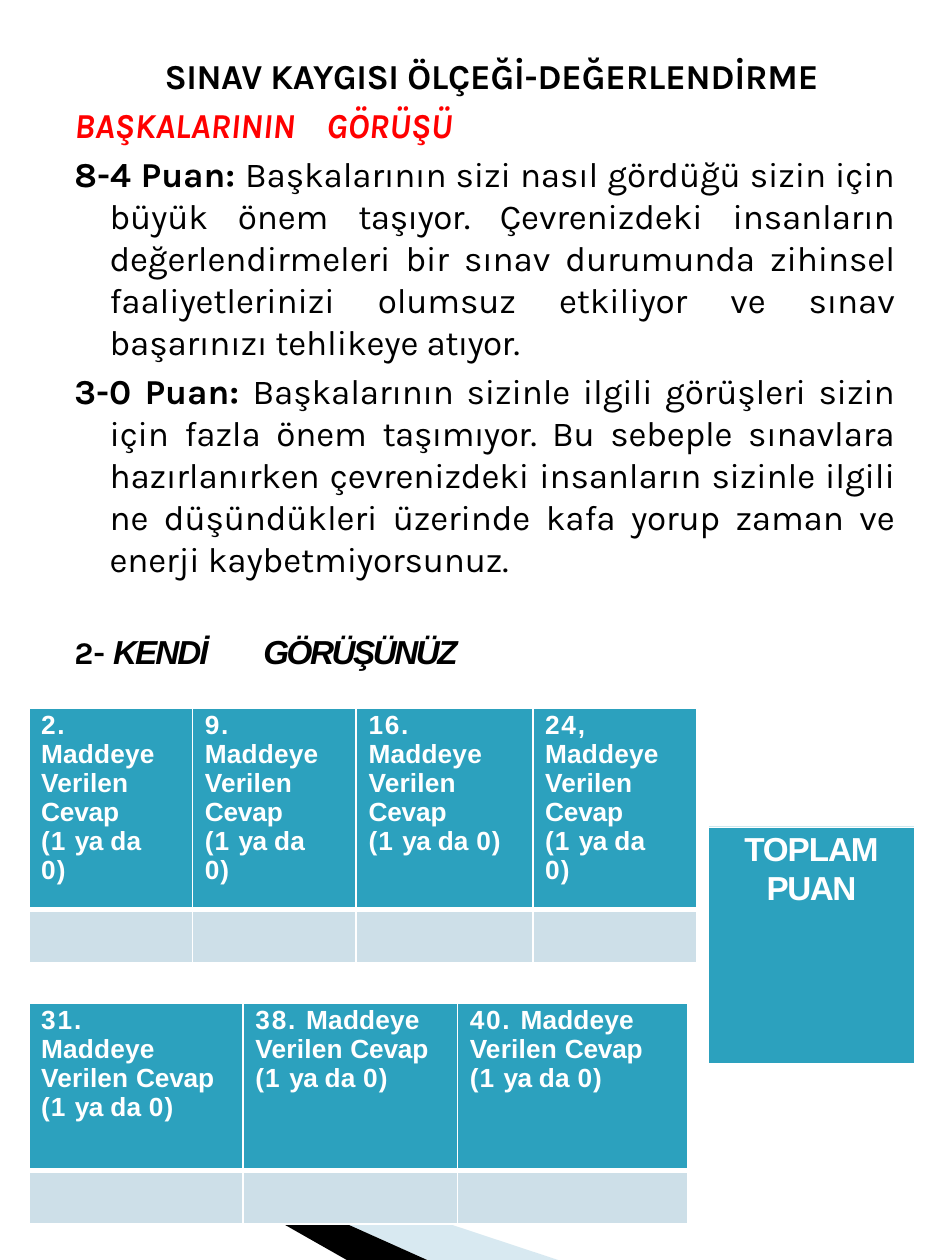
from lxml.etree import SubElement
from pptx import Presentation
from pptx.dml.color import RGBColor
from pptx.enum.shapes import MSO_CONNECTOR, MSO_SHAPE
from pptx.enum.text import PP_ALIGN
from pptx.oxml.ns import qn
from pptx.util import Cm, Pt

COLORS = {"teal": "2CA1BE", "pale": "CDDFE8", "sky": "9FCADC",
          "black": "000000", "white": "FFFFFF", "red": "FF0000"}


def rgb(name):
    return RGBColor.from_string(COLORS[name])


class Page:
    """Holds the style and the slide being drawn."""

    def __init__(self, slide):
        self.slide = slide
        self.shapes = slide.shapes

    def group(self):
        self.shapes = self.slide.shapes.add_group_shape().shapes

    def ungroup(self):
        self.shapes = self.slide.shapes

    def paint(self, shape, color, alpha=None):
        shape.shadow.inherit = False
        shape.fill.solid()
        shape.fill.fore_color.rgb = rgb(color)
        shape.line.fill.background()
        if alpha:
            tint = shape.fill._xPr.find(qn("a:solidFill"))[0]
            SubElement(tint, qn("a:alpha"), val=str(alpha * 1000))

    def wedge(self, points, color, alpha=None):
        dots = [(Cm(x), Cm(y)) for x, y in points]
        form = self.shapes.build_freeform(*dots[0])
        form.add_line_segments(dots[1:])
        self.paint(form.convert_to_shape(), color, alpha)

    def rect(self, x, y, w, h, color):
        box = self.shapes.add_shape(MSO_SHAPE.RECTANGLE, Cm(x), Cm(y), Cm(w), Cm(h))
        self.paint(box, color)

    def line(self, x1, y1, x2, y2, width):
        rule = self.shapes.add_connector(MSO_CONNECTOR.STRAIGHT, Cm(x1), Cm(y1), Cm(x2), Cm(y2))
        rule.line.color.rgb = rgb("white")
        rule.line.width = Pt(width)
        SubElement(rule._element.spPr, qn("a:effectLst"))

    def text(self, x, y, w, h, top, paras):
        frame = self.shapes.add_textbox(Cm(x), Cm(y), Cm(w), Cm(h)).text_frame
        frame.word_wrap = True
        frame.margin_left = frame.margin_right = frame.margin_bottom = 0
        frame.margin_top = Cm(top)
        self.fill(frame, paras)

    def fill(self, frame, paras):
        for i, para in enumerate(paras):
            p = frame.paragraphs[0] if i == 0 else frame.add_paragraph()
            self.para(p, **para)

    def para(self, p, runs, left=0, hang=0, before=0, tab=None, align=PP_ALIGN.LEFT, **style):
        props = p._p.get_or_add_pPr()
        props.set("marL", str(Cm(left)))
        props.set("indent", str(Cm(hang)))
        if tab:
            tabs = SubElement(props, qn("a:tabLst"))
            SubElement(tabs, qn("a:tab"), pos=str(Cm(tab)), algn="l")
        p.alignment = align
        if before:
            p.space_before = Pt(before)
        for words, gap, *own in runs:
            self.run(p, words, gap, **{**style, **(own[0] if own else {})})

    def run(self, p, words, gap, face="Karla", size=20, color="black", bold=True, ital=False):
        r = p.add_run()
        r.text = words
        r.font.name, r.font.size = face, Pt(size)
        r.font.bold, r.font.italic = bold, ital
        r.font.color.rgb = rgb(color)
        r._r.get_or_add_rPr().set("spc", str(round(gap * 100)))

    def cell(self, cell, color, top, base):
        cell.margin_left = cell.margin_right = cell.margin_bottom = 0
        cell.margin_top = Cm(0.05)
        props = cell._tc.get_or_add_tcPr()
        for side, width in (("L", 1), ("R", 1), ("T", top), ("B", base)):
            edge = SubElement(props, qn("a:ln" + side), w=str(Pt(width)))
            paint = SubElement(edge, qn("a:solidFill"))
            SubElement(paint, qn("a:srgbClr"), val=COLORS["white"])
        cell.fill.solid()
        cell.fill.fore_color.rgb = rgb(color)

    def table(self, x, y, cols, rows, heads, right):
        grid = self.shapes.add_table(2, len(cols), Cm(x), Cm(y), Cm(sum(cols)), Cm(sum(rows))).table
        for row, high in zip(grid.rows, rows):
            row.height = Cm(high)
        for i, (wide, head) in enumerate(zip(cols, heads)):
            grid.columns[i].width = Cm(wide)
            self.cell(grid.cell(0, i), "teal", 1, 3)
            self.cell(grid.cell(1, i), "pale", 3, 1)
            grid.cell(0, i).margin_right = Cm(right)
            style = dict(left=0.25, face="Arial", size=15, color="white")
            self.fill(grid.cell(0, i).text_frame, [dict(runs=runs, **style) for runs in head])


deck = Presentation()
deck.slide_width, deck.slide_height = Cm(19.05), Cm(25.4)
page = Page(deck.slides.add_slide(deck.slide_layouts[6]))

# Corner wedges
page.wedge([(1.04, 22.02), (8.61, 25.4), (11.25, 25.4)], "sky", 40)
page.wedge([(1.02, 22), (1.04, 22.02), (6.99, 25.4), (8.61, 25.4)], "black")

# Main text
plain = dict(bold=False)
body = dict(left=0.74, hang=-0.71, before=4, align=PP_ALIGN.JUSTIFY)
arial = dict(face="Arial", size=19, ital=True)
page.text(1.47, 0.91, 16.56, 12.65, 0.18, [
    dict(left=1.85, runs=[("SINAV KAYGISI ", -0.3), ("ÖLÇEĞİ-DEĞERLENDİRME", -0.1)]),
    dict(left=0.03, before=4, tab=5.33, color="red", ital=True,
         runs=[("BAŞKALARININ\t", 0), ("GÖRÜŞÜ", -0.1)]),
    dict(body, runs=[
        ("8-4 Puan: ", 0),
        ("Başkalarının sizi nasıl gördüğü sizin için büyük önem ", -0.1, plain),
        ("taşıyor. ", -0.3, plain),
        ("Çevrenizdeki insanların değerlendirmeleri bir sınav durumunda zihinsel "
         "faaliyetlerinizi olumsuz etkiliyor ve sınav başarınızı tehlikeye ", -0.1, plain),
        ("atıyor.", -0.4, plain)]),
    dict(body, runs=[
        ("3-0 Puan: ", 0),
        ("Başkalarının sizinle ilgili görüşleri sizin için fazla önem ", -0.1, plain),
        ("taşımıyor. ", -0.3, plain),
        ("Bu sebeple sınavlara hazırlanırken çevrenizdeki insanların sizinle ilgili "
         "ne düşündükleri üzerinde kafa yorup zaman ve enerji kaybetmiyorsunuz.", -0.1, plain)]),
    dict(left=0.03, before=30, tab=3.12, runs=[
        ("2- ", 0, dict(size=18)), ("KENDİ\t", -1.1, arial), ("GÖRÜŞÜNÜZ", -1.4, arial)]),
])

# Answer tables
score = [("(1 ", 0.6), ("ya ", -0.3), ("da ", 0.1), ("0)", 0.6)]
ask = [("Maddeye Verilen ", 0.1), ("Cevap", -0.1)]
whole = ask[:1] + [("Cevap ", -0.1)] + score
page.table(0.58, 14.27, [3.3, 3.3, 3.56, 3.3], [4.06, 1.07],
           [[[(num, 1)], ask, score] for num in ("2.", "9.", "16.", "24,")], 0.6)
page.table(0.58, 20.22, [4.32, 4.32, 4.65], [3.38, 1.07],
           [[[("31.", 1.1)], whole]] + [[[(num, 1)] + whole] for num in ("38. ", "40. ")], 0.3)

# Total box
left, top, wide, high = 14.27, 16.66, 4.18, 4.83
page.group()
page.rect(left, top, wide, high, "teal")
for x in (left, left + wide):
    page.line(x, top, x, top + high + 0.05, 1)
page.rect(left, top, wide, 0.03, "white")
page.line(left, top + high, left + wide, top + high, 3)
page.ungroup()
label = dict(face="Arial", size=19, color="white", align=PP_ALIGN.CENTER)
page.text(left, top, wide, 1.68, 0.03, [
    dict(label, runs=[("TOPLAM", -0.6)]), dict(label, runs=[("PUAN", -0.8)])])

deck.save("out.pptx")
